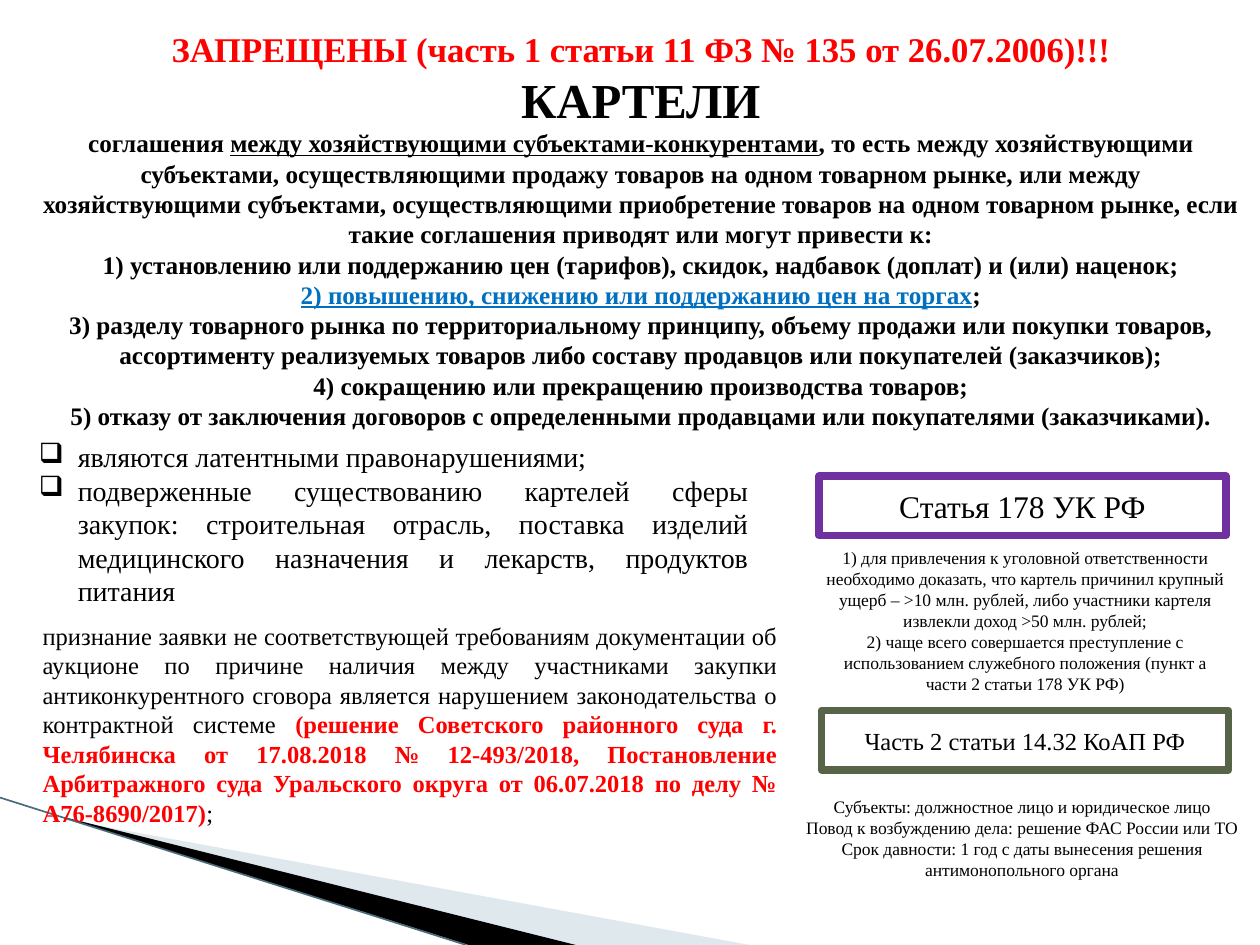
from dataclasses import dataclass
from typing import Optional

from lxml import etree
from pptx import Presentation
from pptx.dml.color import RGBColor
from pptx.enum import shapes, text
from pptx.oxml.ns import qn
from pptx.util import Inches, Pt


@dataclass(frozen=True)
class Theme:
    font: str = "Times New Roman"
    ink: str = "000000"
    paper: str = "FFFFFF"
    alert: str = "FF0000"
    accent: str = "0070C0"
    criminal: str = "7030A0"
    administrative: str = "576448"
    sweep: str = "B1C9D2"
    edge: str = "4A6B79"
    warning_size: float = 19.8
    heading_size: float = 27.9
    definition_size: float = 14.4
    bullet_size: float = 16
    article_size: float = 18
    body_size: float = 14
    note_size: float = 10
    frame_width: float = 4.33


THEME = Theme()


@dataclass(frozen=True)
class Span:
    words: str
    color: str = THEME.ink
    bold: bool = False
    underline: bool = False


@dataclass(frozen=True)
class Line:
    spans: tuple[Span, ...]
    size: float


@dataclass(frozen=True)
class Box:
    left: float
    top: float
    width: float
    height: float

    def emu(self) -> tuple[int, ...]:
        return tuple(Inches(v) for v in (self.left, self.top, self.width, self.height))


@dataclass(frozen=True)
class TextBlock:
    box: Box
    lines: tuple[Line, ...]
    align: text.PP_ALIGN = text.PP_ALIGN.CENTER
    bullet: Optional[str] = None


@dataclass(frozen=True)
class Article:
    box: Box
    title: Line
    frame: str


@dataclass(frozen=True)
class Wedge:
    points: tuple[tuple[float, float], ...]
    color: str
    opacity: int = 100


def plain(size: float, *rows: str, **style) -> tuple[Line, ...]:
    """One single-span line per row of text."""
    return tuple(Line((Span(row, **style),), size) for row in rows)


WEDGES = (
    Wedge(((0.55, 6.51), (5.95, 7.5), (4.56, 7.5), (0.55, 6.5)), THEME.sweep, 40),
    Wedge(((0.53, 6.49), (4.57, 7.5), (3.72, 7.5), (0.54, 6.5)), THEME.ink),
)

BLOCKS = (
    TextBlock(Box(0.24, 0.17, 9.69, 3.3), (
        *plain(THEME.warning_size, "ЗАПРЕЩЕНЫ (часть 1 статьи 11 ФЗ № 135 от 26.07.2006)!!!",
               color=THEME.alert, bold=True),
        *plain(THEME.heading_size, "КАРТЕЛИ", bold=True),
        Line((
            Span("соглашения ", bold=True),
            Span("между хозяйствующими субъектами-конкурентами", bold=True, underline=True),
            Span(", то есть между хозяйствующими субъектами, осуществляющими продажу товаров "
                 "на одном товарном рынке, или между хозяйствующими субъектами, осуществляющими "
                 "приобретение товаров на одном товарном рынке, если такие соглашения приводят "
                 "или могут привести к:", bold=True),
        ), THEME.definition_size),
        *plain(THEME.definition_size, "1) установлению или поддержанию цен (тарифов), скидок, "
               "надбавок (доплат) и (или) наценок;", bold=True),
        Line((
            Span("2) повышению, снижению или поддержанию цен на торгах", THEME.accent, True, True),
            Span(";", bold=True),
        ), THEME.definition_size),
        *plain(THEME.definition_size,
               "3) разделу товарного рынка по территориальному принципу, объему продажи или "
               "покупки товаров, ассортименту реализуемых товаров либо составу продавцов или "
               "покупателей (заказчиков);",
               "4) сокращению или прекращению производства товаров;",
               "5) отказу от заключения договоров с определенными продавцами или покупателями "
               "(заказчиками).", bold=True),
    )),
    TextBlock(Box(0.21, 3.44, 5.83, 1.45), plain(
        THEME.bullet_size,
        "являются латентными правонарушениями;",
        "подверженные существованию картелей сферы закупок: строительная отрасль, поставка "
        "изделий медицинского назначения и лекарств, продуктов питания",
    ), text.PP_ALIGN.JUSTIFY, "❑"),
    TextBlock(Box(6.46, 4.29, 3.35, 1.48), plain(
        THEME.note_size,
        "1) для привлечения к уголовной ответственности необходимо доказать, что картель "
        "причинил крупный ущерб – >10 млн. рублей, либо участники картеля извлекли доход "
        ">50 млн. рублей;",
        "2) чаще всего совершается преступление с использованием служебного положения "
        "(пункт а части 2 статьи 178 УК РФ)",
    )),
    TextBlock(Box(6.3, 6.27, 3.62, 0.94), plain(
        THEME.note_size,
        "Субъекты: должностное лицо и юридическое лицо",
        "Повод к возбуждению дела: решение ФАС России или ТО",
        "Срок давности: 1 год с даты вынесения решения антимонопольного органа",
    )),
    TextBlock(Box(0.24, 4.88, 6.03, 1.75), (Line((
        Span("признание заявки не соответствующей требованиям документации об аукционе по "
             "причине наличия между участниками закупки антиконкурентного сговора является "
             "нарушением законодательства о контрактной системе "),
        Span("(решение Советского районного суда г. Челябинска от 17.08.2018 № 12-493/2018, "
             "Постановление Арбитражного суда Уральского округа от 06.07.2018 по делу "
             "№ А76-8690/2017)", THEME.alert, True),
        Span(";"),
    ), THEME.body_size),), text.PP_ALIGN.JUSTIFY),
)

ARTICLES = (
    Article(Box(6.5, 3.78, 3.23, 0.47),
            plain(THEME.article_size, "Статья 178 УК РФ")[0], THEME.criminal),
    Article(Box(6.52, 5.64, 3.23, 0.47),
            plain(THEME.body_size, "Часть 2 статьи 14.32 КоАП РФ")[0], THEME.administrative),
)


def rgb(color: str) -> RGBColor:
    return RGBColor.from_string(color)


def add_bullet(paragraph, mark: str) -> None:
    props = paragraph._p.get_or_add_pPr()
    props.set("marL", str(Inches(0.31)))
    props.set("indent", str(-Inches(0.31)))
    etree.SubElement(props, qn("a:buChar")).set("char", mark)


def write_lines(frame, lines: tuple[Line, ...], align, bullet: Optional[str] = None) -> None:
    frame.word_wrap = True
    for index, line in enumerate(lines):
        paragraph = frame.add_paragraph() if index else frame.paragraphs[0]
        paragraph.alignment = align
        if bullet:
            add_bullet(paragraph, bullet)
        for span in line.spans:
            run = paragraph.add_run()
            run.text = span.words
            run.font.name, run.font.size = THEME.font, Pt(line.size)
            run.font.bold, run.font.underline = span.bold, span.underline
            run.font.color.rgb = rgb(span.color)


def draw_wedge(slide, wedge: Wedge) -> None:
    start, *rest = [(Inches(x), Inches(y)) for x, y in wedge.points]
    builder = slide.shapes.build_freeform(*start)
    builder.add_line_segments(rest, close=True)
    shape = builder.convert_to_shape()
    shape.shadow.inherit = False
    shape.line.fill.background()
    shape.fill.solid()
    shape.fill.fore_color.rgb = rgb(wedge.color)
    if wedge.opacity < 100:
        tint = shape._element.spPr.find(qn("a:solidFill"))[0]
        etree.SubElement(tint, qn("a:alpha")).set("val", str(wedge.opacity * 1000))


def draw_edge(slide) -> None:
    """Thin slanted line along the lower side of the wedges."""
    edge = slide.shapes.add_connector(shapes.MSO_CONNECTOR.STRAIGHT, Inches(0), Inches(6.33),
                                      Inches(3.7), Inches(7.5))
    edge.line.color.rgb, edge.line.width = rgb(THEME.edge), Pt(0.95)
    etree.SubElement(edge._element.spPr, qn("a:effectLst"))


def draw_article(slide, article: Article) -> None:
    shape = slide.shapes.add_shape(shapes.MSO_SHAPE.RECTANGLE, *article.box.emu())
    shape.shadow.inherit = False
    shape.fill.solid()
    shape.fill.fore_color.rgb = rgb(THEME.paper)
    shape.line.color.rgb, shape.line.width = rgb(article.frame), Pt(THEME.frame_width)
    shape.text_frame.vertical_anchor = text.MSO_ANCHOR.MIDDLE
    write_lines(shape.text_frame, (article.title,), text.PP_ALIGN.CENTER)


def draw_block(slide, block: TextBlock) -> None:
    frame = slide.shapes.add_textbox(*block.box.emu()).text_frame
    write_lines(frame, block.lines, block.align, block.bullet)


def main() -> None:
    deck = Presentation()
    deck.slide_width, deck.slide_height = Inches(10), Inches(7.5)
    slide = deck.slides.add_slide(deck.slide_layouts[6])
    for wedge in WEDGES:
        draw_wedge(slide, wedge)
    draw_edge(slide)
    for article in ARTICLES:
        draw_article(slide, article)
    for block in BLOCKS:
        draw_block(slide, block)
    deck.save("out.pptx")


if __name__ == "__main__":
    main()
